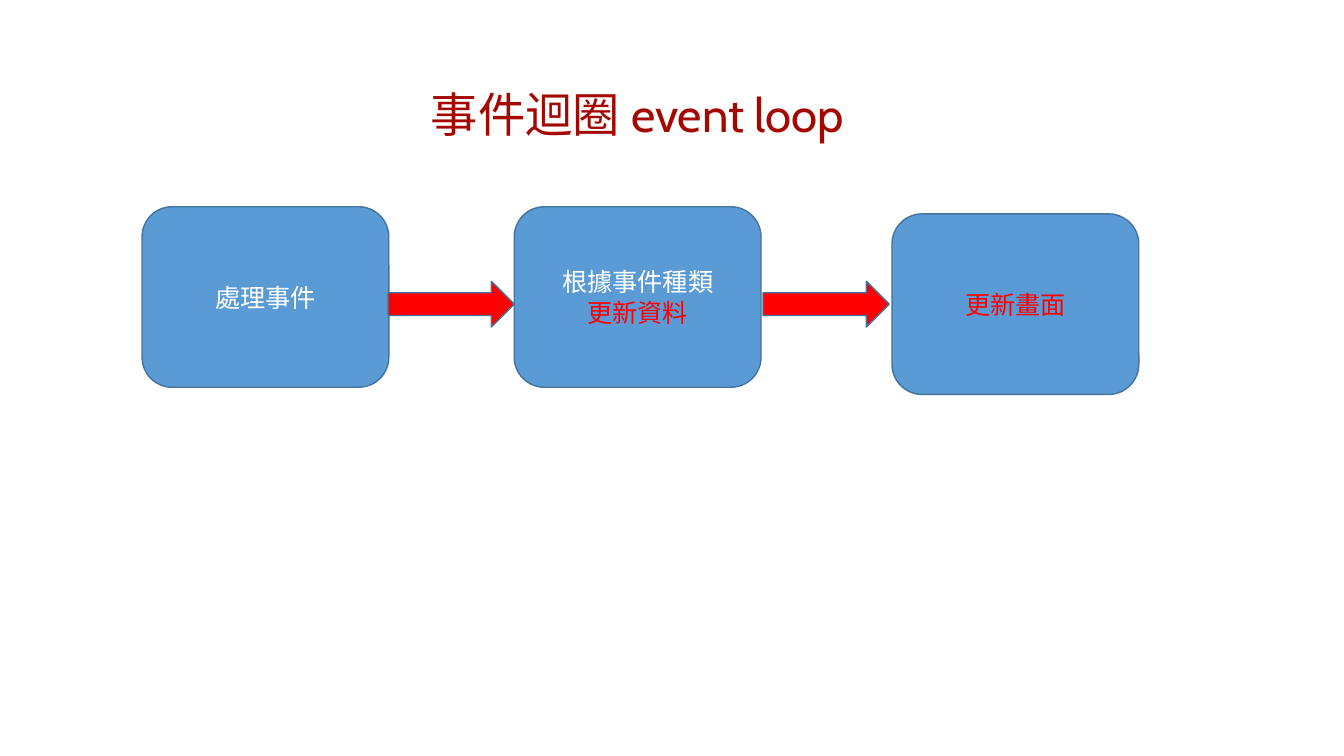
from dataclasses import dataclass

from pptx import Presentation
from pptx.dml.color import RGBColor
from pptx.enum.shapes import MSO_SHAPE
from pptx.enum.text import MSO_ANCHOR, MSO_AUTO_SIZE, PP_ALIGN
from pptx.util import Cm, Pt


@dataclass(frozen=True)
class Theme:
    title: RGBColor = RGBColor(0xA4, 0x08, 0x00)
    step: RGBColor = RGBColor(0x5B, 0x9B, 0xD5)
    outline: RGBColor = RGBColor(0x43, 0x73, 0x9E)
    text: RGBColor = RGBColor(0xFF, 0xFF, 0xFF)
    accent: RGBColor = RGBColor(0xFF, 0x00, 0x00)
    title_font: str = "Cabin"
    body_font: str = "Calibri"
    title_size: float = 33.8
    body_size: float = 18


THEME = Theme()


def style_paragraph(p, font, size, color):
    p.alignment = PP_ALIGN.CENTER
    for r in p.runs:
        r.font.name = font
        r.font.size = Pt(size)
        r.font.color.rgb = color


def add_title(s, text, x, y, w, h):
    sp = s.shapes.title
    sp.left, sp.top, sp.width, sp.height = Cm(x), Cm(y), Cm(w), Cm(h)
    tf = sp.text_frame
    tf.text = text
    tf.word_wrap = True
    tf.auto_size = MSO_AUTO_SIZE.NONE
    tf.vertical_anchor = MSO_ANCHOR.MIDDLE
    tf.margin_left = tf.margin_right = tf.margin_top = tf.margin_bottom = 0
    style_paragraph(tf.paragraphs[0], THEME.title_font, THEME.title_size, THEME.title)


def add_block(s, kind, fill, x, y, w, h):
    sp = s.shapes.add_shape(kind, Cm(x), Cm(y), Cm(w), Cm(h))
    sp.shadow.inherit = False
    sp.fill.solid()
    sp.fill.fore_color.rgb = fill
    sp.line.color.rgb = THEME.outline
    sp.line.width = Pt(1)
    return sp


def add_step(s, lines, x, y, w, h):
    sp = add_block(s, MSO_SHAPE.ROUNDED_RECTANGLE, THEME.step, x, y, w, h)
    tf = sp.text_frame
    tf.text = "\n".join(text for text, color in lines)
    tf.word_wrap = True
    tf.vertical_anchor = MSO_ANCHOR.MIDDLE
    for p, (text, color) in zip(tf.paragraphs, lines):
        style_paragraph(p, THEME.body_font, THEME.body_size, color)


def add_event_loop(s, x, y, w, h):
    step_w, step_h = 6.22, 4.55
    steps = [
        (0, 0, [("處理事件", THEME.text)]),
        (9.38, 0, [("根據事件種類", THEME.text), ("更新資料", THEME.accent)]),
        (w - step_w, h - step_h, [("更新畫面", THEME.accent)]),
    ]
    for dx, dy, lines in steps:
        add_step(s, lines, x + dx, y + dy, step_w, step_h)
    for dx in (6.2, 15.65):
        add_block(s, MSO_SHAPE.RIGHT_ARROW, THEME.accent, x + dx, y + 1.88, 3.18, 1.15)


def main():
    prs = Presentation()
    prs.slide_width, prs.slide_height = Cm(33.87), Cm(19.05)
    s = prs.slides.add_slide(prs.slide_layouts[5])
    add_title(s, "事件迴圈 event loop", 6.1, 2.16, 19.94, 1.42)
    add_event_loop(s, 3.58, 5.21, 25.12, 4.73)
    prs.save("out.pptx")


if __name__ == "__main__":
    main()
